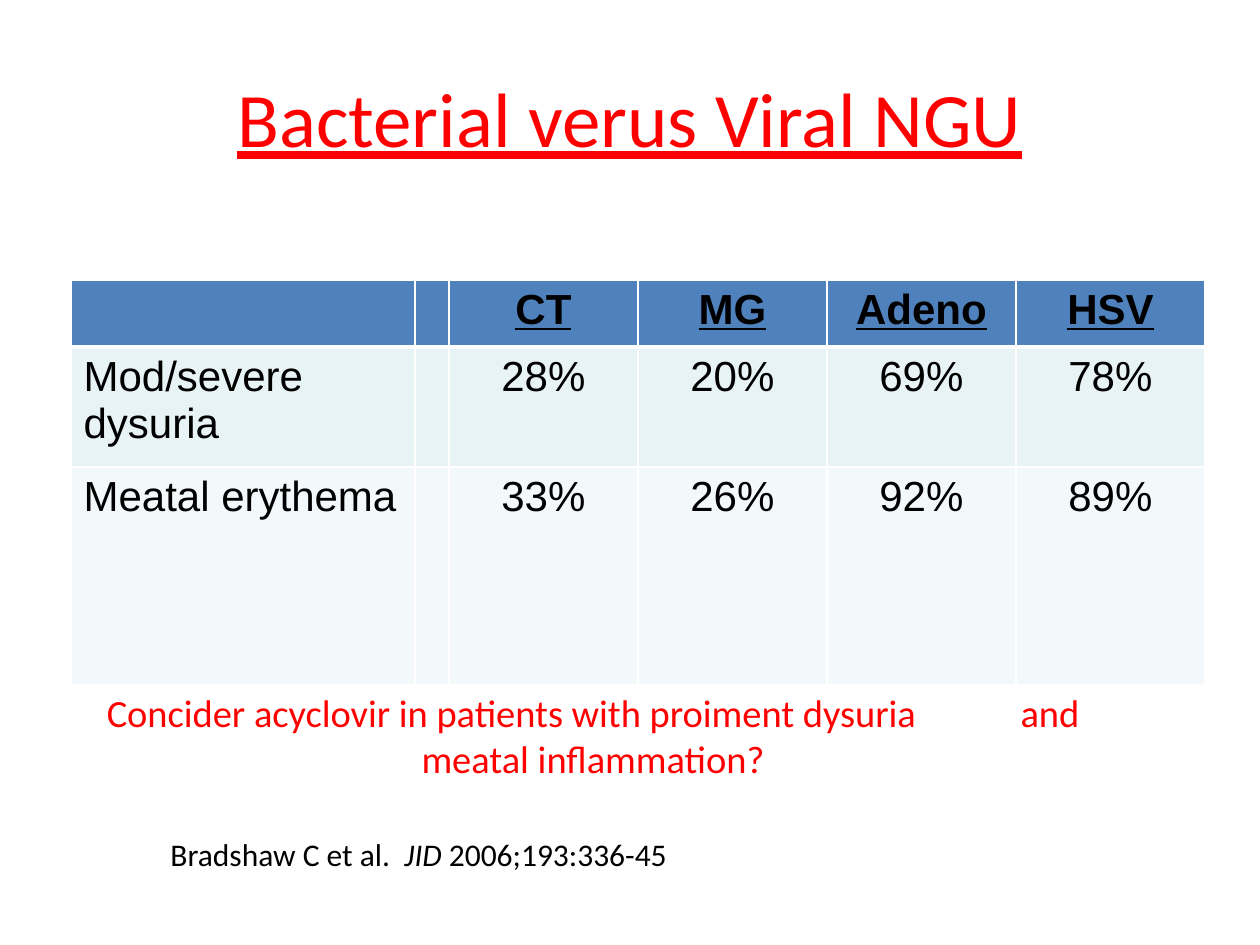
from lxml import etree
from pptx import Presentation, util as u
from pptx.dml.color import RGBColor
from pptx.enum import text
from pptx.oxml.ns import qn

SCALE = u.Inches(1) / 126
COLORS = {"red": "FF0000", "black": "000000", "white": "FFFFFF",
          "header": "4F81BD", "band1": "E7F3F4", "band2": "F3F9FA"}
CENTER = text.PP_ALIGN.CENTER


def px(*lengths):
    return [u.Emu(round(n * SCALE)) for n in lengths]


def style(paragraph, name, size, color, align=None):
    paragraph.alignment = align
    paragraph.font.name = name
    paragraph.font.size = u.Pt(size)
    paragraph.font.color.rgb = RGBColor.from_string(COLORS[color])


prs = Presentation()
prs.slide_width, prs.slide_height = px(1260, 945)
slide = prs.slides.add_slide(prs.slide_layouts[6])

# Title
title = slide.shapes.add_textbox(*px(63, 38, 1134, 157)).text_frame
title.word_wrap = True
title.vertical_anchor = text.MSO_ANCHOR.MIDDLE
heading = title.paragraphs[0]
heading.text = "Bacterial verus Viral NGU"
style(heading, "Calibri", 44, "red", CENTER)
heading.font.underline = True

# Symptoms by cause
rows = [
    ("header", 67, ["", "", "CT", "MG", "Adeno", "HSV"]),
    ("band1", 120, ["Mod/severe dysuria", "", "28%", "20%", "69%", "78%"]),
    ("band2", 218, ["Meatal erythema", "", "33%", "26%", "92%", "89%"]),
]
symptoms = slide.shapes.add_table(3, 6, *px(71, 280, 1134, 405)).table
symptoms.horz_banding = False
for column, width in zip(symptoms.columns, px(344, 34, *[189] * 4)):
    column.width = width

for r, (fill, height, values) in enumerate(rows):
    symptoms.rows[r].height = px(height)[0]
    for c, value in enumerate(values):
        cell = symptoms.cell(r, c)
        paragraph = cell.text_frame.paragraphs[0]
        paragraph.text = value
        style(paragraph, "Arial", 24, "black", CENTER if c > 1 else None)
        paragraph.font.bold = paragraph.font.underline = r == 0

        # White rules, thicker below the header
        properties = cell._tc.get_or_add_tcPr()
        for side in "LRTB":
            thick = (r, side) in [(0, "B"), (1, "T")]
            line = etree.SubElement(properties, qn(f"a:ln{side}"),
                                    w=str(u.Pt(3 if thick else 1)))
            solid = etree.SubElement(line, qn("a:solidFill"))
            etree.SubElement(solid, qn("a:srgbClr"), val=COLORS["white"])
        cell.fill.solid()
        cell.fill.fore_color.rgb = RGBColor.from_string(COLORS[fill])

# Citation
citation = slide.shapes.add_textbox(*px(158, 829, 525, 50)).text_frame
citation.word_wrap = False
reference = citation.paragraphs[0]
for part in ("Bradshaw C et al.  ", "JID", " 2006;193:336-45"):
    run = reference.add_run()
    run.text = part
    run.font.italic = part == "JID"
style(reference, "Calibri", 18, "black")

# Treatment question, with one widened space before "and"
question = slide.shapes.add_textbox(*px(73, 683, 1040, 105)).text_frame
question.word_wrap = True
advice = question.paragraphs[0]
for part in ("Concider acyclovir in patients with proiment dysuria", " ",
             "and meatal inflammation?"):
    run = advice.add_run()
    run.text = part
    if part == " ":
        run._r.get_or_add_rPr().set("spc", "5450")
style(advice, "Calibri", 22, "red", CENTER)

prs.save("out.pptx")
